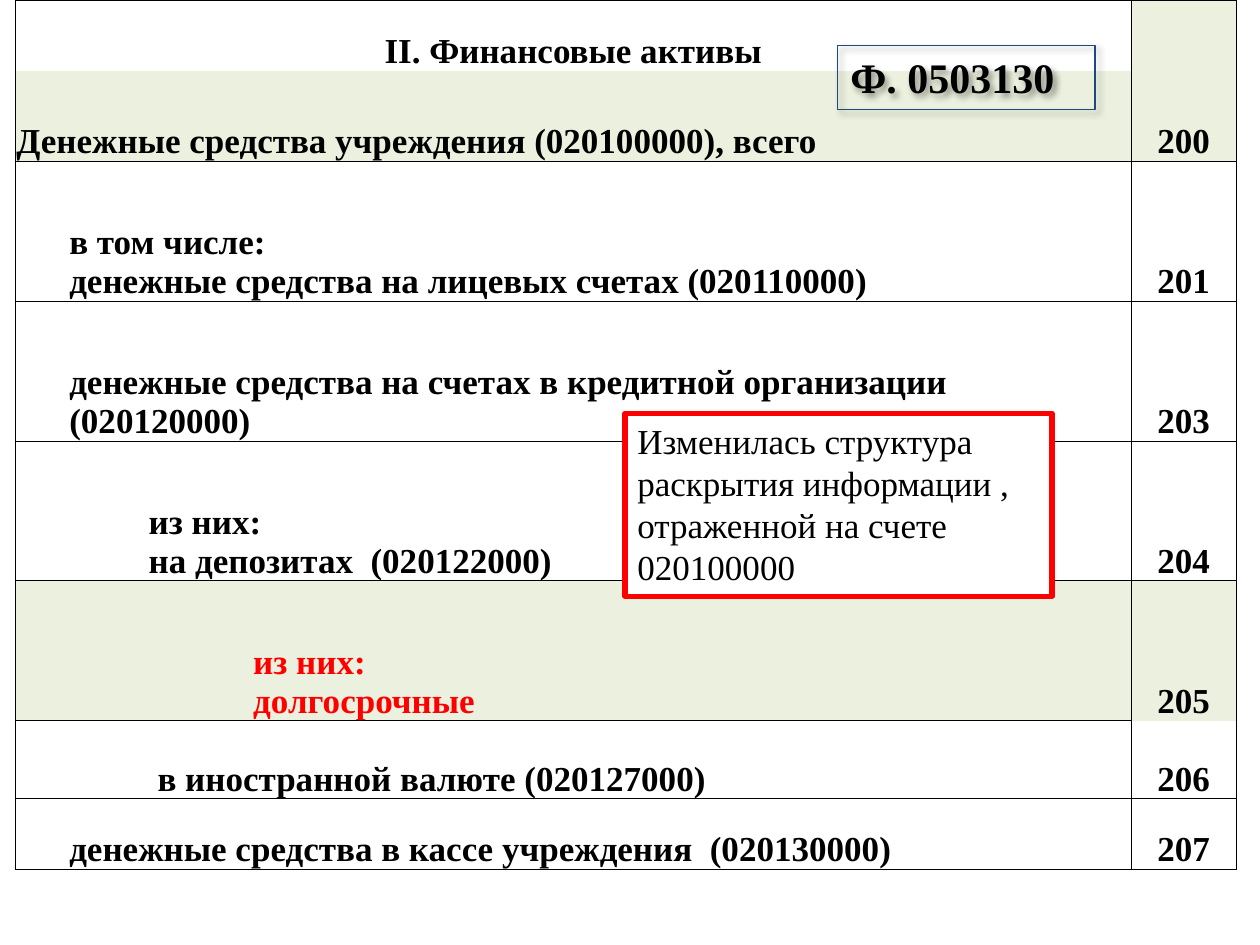
from dataclasses import dataclass

from lxml.etree import SubElement
from pptx import Presentation
from pptx.dml.color import RGBColor
from pptx.enum.shapes import MSO_SHAPE
from pptx.enum.text import MSO_ANCHOR, PP_ALIGN
from pptx.oxml import parse_xml
from pptx.oxml.ns import nsdecls, qn
from pptx.util import Inches, Pt


@dataclass(frozen=True)
class Theme:
    font: str = "Times New Roman"
    ink: str = "000000"
    alert: str = "FF0000"
    frame: str = "1F497D"
    paper: str = "FFFFFF"
    tint: str = "EBF1DE"
    body_size: float = 20
    label_size: float = 24
    rule: float = 0.5


THEME = Theme()
WIDTH, HEIGHT = Inches(10), Inches(7.5)
ALL_SIDES = "LRTB"

# Lengths are percentages of the slide's width or height.
TABLE_LEFT = 1.2
COLUMNS = (88.6, 8.3)
SHORT, TOTAL, TALL, MEDIUM = 7.47, 9.6, 14.8, 8.27

# Left cell margins in inches, one for each level of the account tree.
FLUSH, LEVEL_1, LEVEL_2, CURRENCY, LEVEL_3 = 0.01, 0.43, 1.06, 1.13, 1.89

# Height, indent, lines of the name, line code
ROWS = [
    (SHORT, FLUSH, ["II. Финансовые активы"], "200"),
    (TOTAL, FLUSH, ["Денежные средства учреждения (020100000), всего"], None),
    (TALL, LEVEL_1, ["в том числе:", "денежные средства на лицевых счетах (020110000)"], "201"),
    (TALL, LEVEL_1, ["денежные средства на счетах в кредитной организации", "(020120000)"], "203"),
    (TALL, LEVEL_2, ["из них:", "на депозитах  (020122000)"], "204"),
    (TALL, LEVEL_3, ["из них:", "долгосрочные"], "205"),
    (MEDIUM, CURRENCY, ["в иностранной валюте (020127000)"], "206"),
    (SHORT, LEVEL_1, ["денежные средства в кассе учреждения  (020130000)"], "207"),
]
TITLE_ROW, TOTAL_ROW, NEW_ROW, CURRENCY_ROW = 0, 1, 5, 6
TINTED = {(TITLE_ROW, 1), (TOTAL_ROW, 0), (TOTAL_ROW, 1), (NEW_ROW, 0), (NEW_ROW, 1)}
OPEN_SIDES = {
    (TITLE_ROW, 0): "B", (TOTAL_ROW, 0): "T",
    (TITLE_ROW, 1): "B", (TOTAL_ROW, 1): "T",
    (NEW_ROW, 1): "B", (CURRENCY_ROW, 1): "T",
}


def across(share):
    return round(WIDTH * share / 100)


def down(share):
    return round(HEIGHT * share / 100)


def colour(value):
    return RGBColor.from_string(value)


def paint(fill, value):
    if value:
        fill.solid()
        fill.fore_color.rgb = colour(value)
    else:
        fill.background()


def write(frame, lines, size=THEME.body_size, ink=THEME.ink, bold=False, align=PP_ALIGN.LEFT):
    para = frame.paragraphs[0]
    para.alignment = align
    for index, line in enumerate(lines):
        if index:
            para.add_line_break()
        span = para.add_run()
        span.text = line
        span.font.name = THEME.font
        span.font.size = Pt(size)
        span.font.bold = bold
        span.font.color.rgb = colour(ink)


def draw_borders(cell, open_sides):
    """Rule every side of the cell except the open ones."""
    properties = cell._tc.get_or_add_tcPr()
    for index, side in enumerate(ALL_SIDES):
        line = parse_xml(f'<a:ln{side} {nsdecls("a")} w="{Pt(THEME.rule)}"/>')
        if side in open_sides:
            SubElement(line, qn("a:noFill"))
        else:
            solid = SubElement(line, qn("a:solidFill"))
            SubElement(solid, qn("a:srgbClr"), val=THEME.ink)
        properties.insert(index, line)


def fill_cell(cell, lines, place, indent=FLUSH, **text_format):
    cell.vertical_anchor = MSO_ANCHOR.BOTTOM
    cell.margin_left = Inches(indent)
    cell.margin_right = cell.margin_top = Inches(0.01)
    cell.margin_bottom = 0
    paint(cell.fill, THEME.tint if place in TINTED else None)
    draw_borders(cell, OPEN_SIDES.get(place, ""))
    write(cell.text_frame, lines, bold=True, **text_format)


def add_accounts(slide):
    height = sum(row[0] for row in ROWS)
    table = slide.shapes.add_table(
        len(ROWS), len(COLUMNS), across(TABLE_LEFT), 0, across(sum(COLUMNS)), down(height)
    ).table
    table.first_row = table.horz_banding = False
    for column, share in zip(table.columns, COLUMNS):
        column.width = across(share)
    for index, (share, indent, lines, code) in enumerate(ROWS):
        table.rows[index].height = down(share)
        fill_cell(
            table.cell(index, 0), lines, (index, 0), indent,
            ink=THEME.alert if index == NEW_ROW else THEME.ink,
            align=PP_ALIGN.CENTER if index == TITLE_ROW else PP_ALIGN.LEFT,
        )
        fill_cell(table.cell(index, 1), [code] if code else [], (index, 1), align=PP_ALIGN.CENTER)
    table.cell(TITLE_ROW, 1).merge(table.cell(TOTAL_ROW, 1))


def add_box(slide, left, top, width, height, text, line, weight, fill=None, **text_format):
    box = slide.shapes.add_shape(
        MSO_SHAPE.RECTANGLE, across(left), down(top), across(width), down(height)
    )
    box.shadow.inherit = False
    paint(box.fill, fill)
    box.line.color.rgb = colour(line)
    box.line.width = Pt(weight)
    box.text_frame.word_wrap = True
    box.text_frame.vertical_anchor = MSO_ANCHOR.TOP
    write(box.text_frame, [text], **text_format)
    return box


def add_shadow(box):
    effects = box._element.spPr.find(qn("a:effectLst"))
    shadow = SubElement(
        effects, qn("a:outerShdw"), blurRad=str(Pt(4)), dist=str(Pt(3)),
        dir=str(45 * 60000), algn="tl", rotWithShape="0",
    )
    tone = SubElement(shadow, qn("a:srgbClr"), val=THEME.ink)
    SubElement(tone, qn("a:alpha"), val="40000")


def main():
    deck = Presentation()
    deck.slide_width, deck.slide_height = WIDTH, HEIGHT
    slide = deck.slides.add_slide(deck.slide_layouts[6])
    add_accounts(slide)
    form_label = add_box(
        slide, 66.5, 4.8, 20.4, 6.8, "Ф. 0503130",
        line=THEME.frame, weight=0.75, size=THEME.label_size, bold=True,
    )
    add_shadow(form_label)
    add_box(
        slide, 49.6, 43.75, 33.9, 19.35,
        "Изменилась структура раскрытия информации , отраженной на счете 020100000",
        line=THEME.alert, weight=3, fill=THEME.paper,
    )
    deck.save("out.pptx")


if __name__ == "__main__":
    main()
